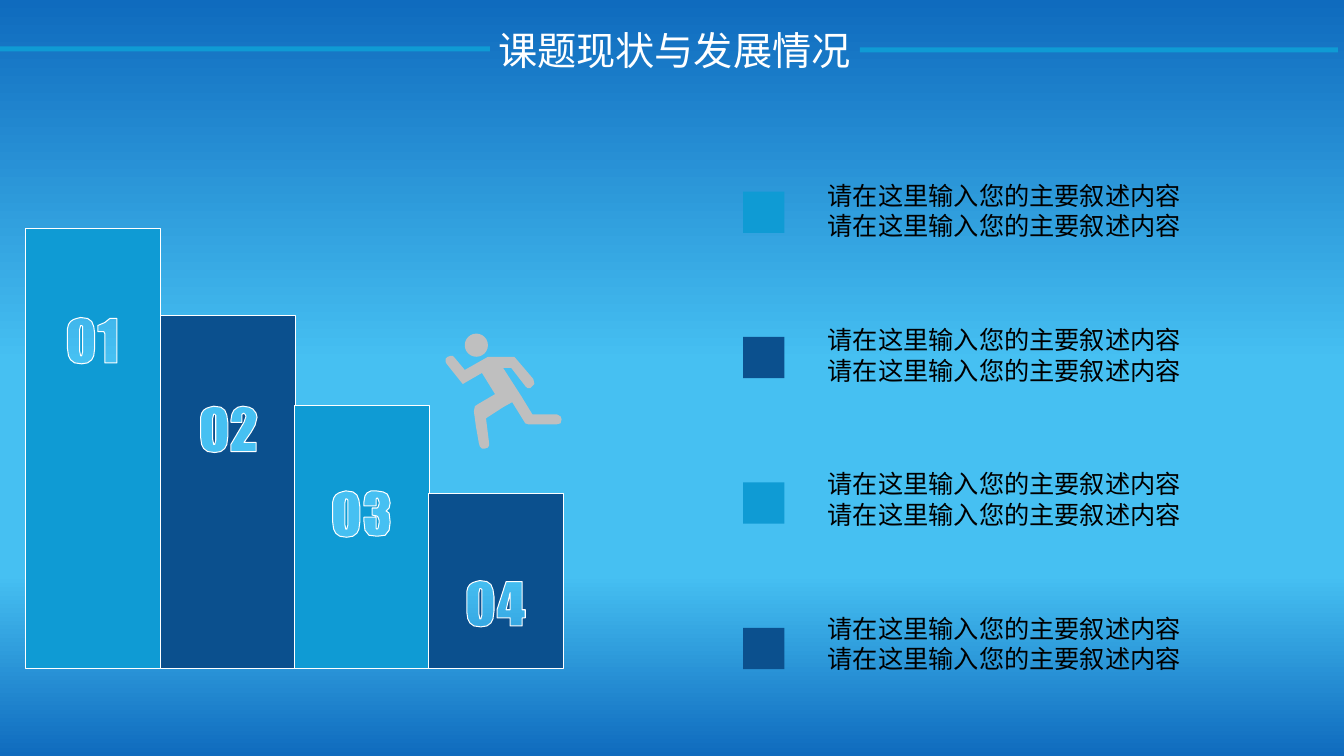
from dataclasses import dataclass
from copy import deepcopy

from lxml import etree
from pptx import Presentation
from pptx import util as u
from pptx.dml.color import RGBColor
from pptx.enum import shapes, text
from pptx.oxml.ns import qn

# The slide is a grid of 1333 columns by 750 rows, each 0.01 inch.
CELL = u.Inches(0.01)
COLS, ROWS = 1333, 750
FONT = "Noto Sans CJK SC"
HUES = {
    "sky": "0F9BD4", "navy": "0B508E", "grey": "BFBFBF",
    "white": "FFFFFF", "black": "000000", "deep": "0F6BBE", "light": "46C0F2",
}
Points = list[tuple[int, int]]


@dataclass
class Box:
    left: float
    top: float
    width: float
    height: float

    def emu(self) -> list[int]:
        return [round(n * CELL) for n in (self.left, self.top, self.width, self.height)]


@dataclass
class Step:
    left: int
    top: int
    digit: int
    mark: tuple[int, int]  # top left of the number cut out of the step
    hue: str


BASE, WIDE = 663, 134
STEPS = [
    Step(25, 227, 1, (67, 315), "sky"),
    Step(159, 313, 2, (199, 403), "navy"),
    Step(292, 402, 3, (330, 487), "sky"),
    Step(425, 490, 4, (463, 576), "navy"),
]
ZERO: list[Points] = [
    [(13, 0), (9, 1), (6, 2), (3, 4), (1, 7), (0, 11), (0, 16), (0, 31), (1, 38), (3, 42),
     (7, 45), (14, 46), (20, 45), (24, 42), (26, 38), (27, 30), (27, 16), (26, 9),
     (24, 4), (20, 1)],
    [(14, 8), (15, 9), (15, 12), (15, 34), (14, 38), (13, 38), (12, 33), (12, 12), (13, 8)],
]
DIGITS: dict[int, list[Points]] = {
    1: [[(42, 1), (37, 5), (30, 8), (30, 14), (36, 14), (37, 16), (37, 45), (49, 45), (49, 1)]],
    2: [[(42, 0), (37, 1), (33, 4), (31, 8), (30, 14), (30, 16), (41, 16), (41, 8), (43, 7),
         (44, 8), (45, 10), (43, 16), (30, 38), (30, 45), (55, 45), (55, 36), (43, 36),
         (50, 26), (54, 19), (56, 11), (55, 7), (52, 3), (48, 1)]],
    3: [[(43, 0), (38, 0), (34, 2), (32, 5), (31, 11), (31, 15), (43, 15), (43, 8), (44, 7),
         (45, 8), (46, 11), (46, 13), (45, 16), (44, 17), (39, 17), (39, 24), (44, 25),
         (45, 26), (46, 29), (46, 32), (45, 37), (44, 38), (43, 37), (43, 34), (43, 26),
         (31, 26), (31, 30), (32, 39), (36, 44), (44, 45), (52, 44), (56, 39), (57, 31),
         (56, 22), (53, 20), (56, 17), (57, 12), (56, 7), (54, 3), (50, 1)]],
    4: [[(39, 1), (30, 29), (30, 37), (43, 37), (43, 45), (55, 45), (55, 37), (58, 37),
         (58, 29), (55, 29), (55, 1)],
        [(43, 12), (43, 29), (39, 29)]],
}
RUNNER: Points = [
    (447, 353), (444, 354), (442, 356), (442, 359), (443, 361), (451, 371), (459, 381),
    (478, 370), (491, 391), (474, 401), (471, 403), (470, 408), (472, 423), (475, 440),
    (476, 443), (478, 445), (481, 445), (484, 444), (485, 442), (485, 439), (482, 415),
    (499, 404), (508, 399), (521, 420), (524, 421), (552, 421), (556, 420), (557, 416),
    (556, 413), (552, 411), (528, 411), (517, 393), (499, 365), (507, 365), (521, 383),
    (523, 385), (526, 385), (528, 383), (530, 381), (529, 376), (511, 355), (510, 354),
    (484, 354), (461, 367), (451, 355), (449, 353),
]
LINE = "请在这里输入您的主要叙述内容"


def rgb(hue: str) -> RGBColor:
    return RGBColor.from_string(HUES[hue])


def paint(shape, hue: str, edge: str | None = None) -> None:
    shape.shadow.inherit = False
    shape.fill.solid()
    shape.fill.fore_color.rgb = rgb(hue)
    if edge:
        shape.line.color.rgb = rgb(edge)
        shape.line.width = u.Pt(0.75)
    else:
        shape.line.fill.background()


def trace(slide, rings: list[Points], hue: str, edge: str | None = None) -> None:
    """Draw closed outlines as one shape; inner rings become holes."""
    pen = slide.shapes.build_freeform(*rings[0][0], scale=CELL)
    for i, ring in enumerate(rings):
        if i:
            pen.move_to(*ring[0])
        pen.add_line_segments(ring[1:], close=True)
    paint(pen.convert_to_shape(), hue, edge)


def stair(slide, step: Step) -> None:
    right = step.left + WIDE
    frame = [(step.left, step.top), (right, step.top), (right, BASE), (step.left, BASE)]
    x, y = step.mark
    holes = [[(x + a, y + b) for a, b in ring] for ring in ZERO + DIGITS[step.digit]]
    trace(slide, [frame, *holes], step.hue, "white")


def block(slide, kind: shapes.MSO_SHAPE, box: Box, hue: str) -> None:
    paint(slide.shapes.add_shape(kind, *box.emu()), hue)


def write(holder, box: Box, words: str, size: int, hue: str) -> None:
    """Move a placeholder and set its text, plain and flush left."""
    holder.left, holder.top, holder.width, holder.height = box.emu()
    frame = holder.text_frame
    frame.text = words
    frame.word_wrap = False
    frame.auto_size = text.MSO_AUTO_SIZE.NONE
    frame.vertical_anchor = text.MSO_ANCHOR.TOP
    for para in frame.paragraphs:
        para.alignment = text.PP_ALIGN.LEFT
        para.space_before = u.Pt(0)
        props = para._p.get_or_add_pPr()
        props.set("marL", "0")
        props.set("indent", "0")
        etree.SubElement(props, qn("a:buNone"))
        for run in para.runs:
            run.font.size = u.Pt(size)
            run.font.bold = False
            run.font.color.rgb = rgb(hue)
            run.font.name = FONT
            etree.SubElement(run._r.get_or_add_rPr(), qn("a:ea"), typeface=FONT)


def shade(slide) -> None:
    """Fill the background with a gradient running down the slide."""
    fill = slide.background.fill
    fill.gradient()
    fill.gradient_angle = 270
    stops = slide.element.find(".//" + qn("a:gsLst"))
    for _ in range(2):
        stops.append(deepcopy(stops[0]))
    ramp = [(0, "deep"), (0.48, "light"), (0.76, "light"), (1, "deep")]
    for stop, (place, hue) in zip(fill.gradient_stops, ramp):
        stop.position = place
        stop.color.rgb = rgb(hue)


def main() -> None:
    deck = Presentation()
    deck.slide_width, deck.slide_height = COLS * CELL, ROWS * CELL
    slide = deck.slides.add_slide(deck.slide_layouts.get_by_name("Comparison"))
    shade(slide)
    kinds = shapes.MSO_SHAPE

    for step in STEPS:
        stair(slide, step)
    trace(slide, [RUNNER], "grey")
    block(slide, kinds.OVAL, Box(461, 331, 23, 23), "grey")

    title, *notes = slide.placeholders
    for i, (note, step) in enumerate(zip(notes, STEPS)):
        block(slide, kinds.RECTANGLE, Box(737, 190 + 144.3 * i, 41, 41), step.hue)
        write(note, Box(811, 174 + 143 * i, 415, 112), f"{LINE}\n{LINE}", 18, "black")

    for rule in (Box(0, 46, 486, 5), Box(853, 47, 474, 5)):
        block(slide, kinds.RECTANGLE, rule, "sky")
    write(title, Box(484, 21, 384, 57), "课题现状与发展情况", 28, "white")
    deck.save("out.pptx")


if __name__ == "__main__":
    main()
